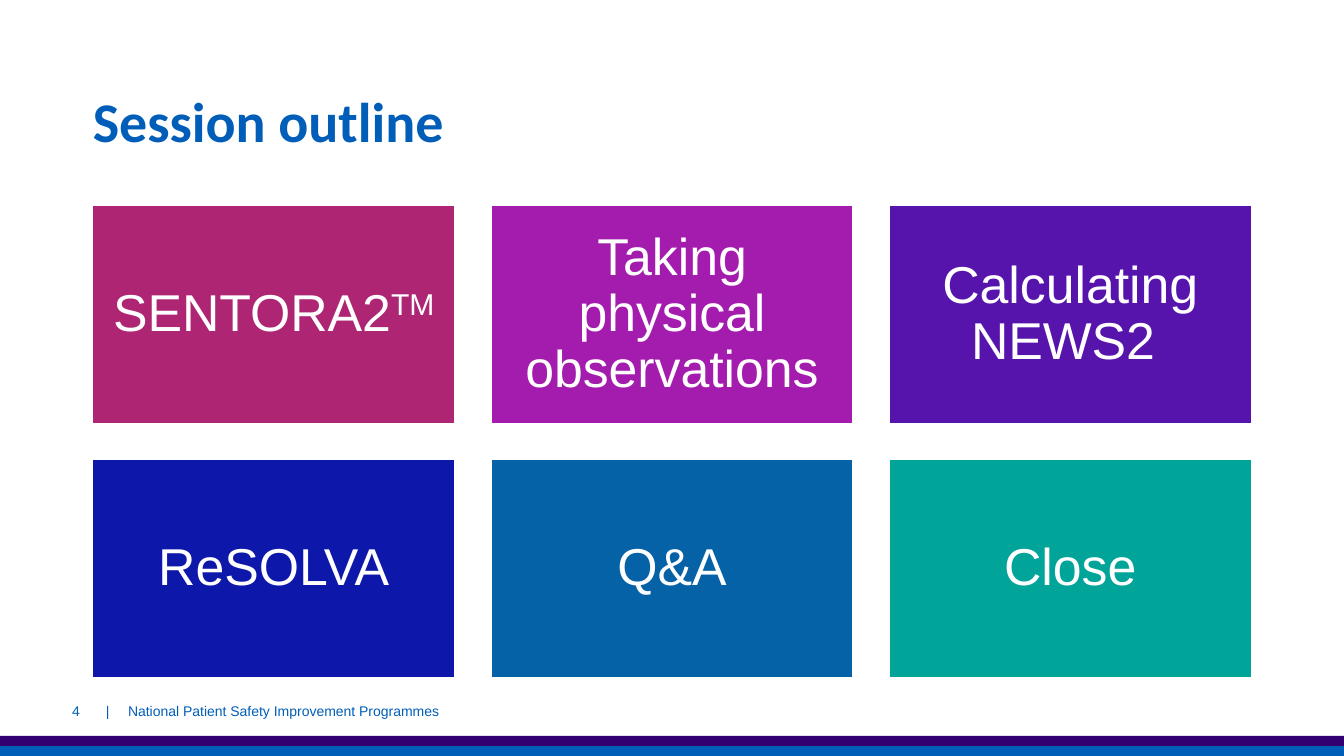
from dataclasses import dataclass

from lxml import etree
from pptx import Presentation
from pptx.dml.color import RGBColor
from pptx.enum.shapes import MSO_SHAPE
from pptx.enum.text import MSO_ANCHOR, MSO_AUTO_SIZE, PP_ALIGN
from pptx.oxml.ns import qn
from pptx.shapes.autoshape import Shape
from pptx.slide import Slide
from pptx.text.text import TextFrame
from pptx.util import Inches, Pt

RECTANGLE = MSO_SHAPE.RECTANGLE
TOP, MIDDLE = MSO_ANCHOR.TOP, MSO_ANCHOR.MIDDLE
LEFT, CENTER, RIGHT = PP_ALIGN.LEFT, PP_ALIGN.CENTER, PP_ALIGN.RIGHT
NO_AUTOFIT = MSO_AUTO_SIZE.NONE

WHITE = RGBColor(0xFF, 0xFF, 0xFF)
BLUE = RGBColor(0x00, 0x5E, 0xB8)
PURPLE = RGBColor(0x33, 0x00, 0x72)

SLIDE_WIDTH, SLIDE_HEIGHT = 13.33, 7.5
COLUMNS = 3
TILE_LEFT, TILE_TOP = 0.92, 2.04
TILE_WIDTH, TILE_HEIGHT = 3.59, 2.16
COLUMN_STEP, ROW_STEP = 3.95, 2.52
TILE_INSET = 0.15
BAND_HEIGHT = 0.1
FOOTER_TOP, FOOTER_HEIGHT = 6.85, 0.4
FOOTER_TAB = 0.22


@dataclass(frozen=True)
class Tile:
    text: str
    color: RGBColor
    superscript: str = ""


@dataclass(frozen=True)
class FooterItem:
    text: str
    left: float
    width: float
    side_inset: float
    alignment: PP_ALIGN


TILES = [
    Tile("SENTORA2", RGBColor(0xAE, 0x25, 0x73), "TM"),
    Tile("Taking physical observations", RGBColor(0xA3, 0x1C, 0xAD)),
    Tile("Calculating NEWS2 ", RGBColor(0x56, 0x14, 0xAC)),
    Tile("ReSOLVA", RGBColor(0x0D, 0x18, 0xAA)),
    Tile("Q&A", RGBColor(0x06, 0x62, 0xA7)),
    Tile("Close", RGBColor(0x00, 0xA4, 0x99)),
]

FOOTER_ITEMS = [
    FooterItem("|\tNational Patient Safety Improvement Programmes", 1.05, 4.5, 0, LEFT),
    FooterItem("4", 0.13, 0.76, 0.1, RIGHT),
]


def set_frame(frame: TextFrame, anchor: MSO_ANCHOR, side: float, vertical: float) -> None:
    frame.word_wrap = True
    frame.auto_size = NO_AUTOFIT
    frame.vertical_anchor = anchor
    frame.margin_left = frame.margin_right = Inches(side)
    frame.margin_top = frame.margin_bottom = Inches(vertical)


def format_runs(frame: TextFrame, font: str, size: int, color: RGBColor,
                bold: bool = False) -> None:
    for run in frame.paragraphs[0].runs:
        run.font.name = font
        run.font.size = Pt(size)
        run.font.bold = bold
        run.font.color.rgb = color


def add_rectangle(slide: Slide, left: float, top: float, width: float, height: float,
                  color: RGBColor) -> Shape:
    shape = slide.shapes.add_shape(
        RECTANGLE, Inches(left), Inches(top), Inches(width), Inches(height))
    shape.shadow.inherit = False
    shape.fill.solid()
    shape.fill.fore_color.rgb = color
    shape.line.fill.background()
    return shape


def add_bands(slide: Slide) -> None:
    for position, color in enumerate((BLUE, PURPLE), start=1):
        top = SLIDE_HEIGHT - position * BAND_HEIGHT
        add_rectangle(slide, 0, top, SLIDE_WIDTH, BAND_HEIGHT, color)


def add_tile(slide: Slide, index: int, tile: Tile) -> None:
    row, column = divmod(index, COLUMNS)
    shape = add_rectangle(
        slide, TILE_LEFT + column * COLUMN_STEP, TILE_TOP + row * ROW_STEP,
        TILE_WIDTH, TILE_HEIGHT, tile.color)
    shape.line.color.rgb = WHITE
    shape.line.width = Pt(1)
    frame = shape.text_frame
    set_frame(frame, MIDDLE, TILE_INSET, TILE_INSET)
    frame.text = tile.text
    paragraph = frame.paragraphs[0]
    paragraph.alignment = CENTER
    paragraph.line_spacing = 0.9
    if tile.superscript:
        run = paragraph.add_run()
        run.text = tile.superscript
        run._r.get_or_add_rPr().set("baseline", "30000")
    format_runs(frame, "Arial", 37, WHITE)


def set_title(slide: Slide, text: str) -> None:
    title = slide.shapes.title
    title.left, title.top = Inches(TILE_LEFT), Inches(0.93)
    title.width, title.height = Inches(11.76), Inches(0.98)
    frame = title.text_frame
    set_frame(frame, TOP, 0, 0)
    frame.text = text
    frame.paragraphs[0].alignment = LEFT
    frame.paragraphs[0].line_spacing = 0.9
    format_runs(frame, "Calibri", 40, BLUE, bold=True)


def add_footer_item(slide: Slide, item: FooterItem) -> None:
    box = slide.shapes.add_textbox(
        Inches(item.left), Inches(FOOTER_TOP), Inches(item.width), Inches(FOOTER_HEIGHT))
    frame = box.text_frame
    set_frame(frame, MIDDLE, item.side_inset, 0.05)
    frame.text = item.text
    paragraph = frame.paragraphs[0]
    paragraph.alignment = item.alignment
    if "\t" in item.text:
        tabs = etree.SubElement(paragraph._p.get_or_add_pPr(), qn("a:tabLst"))
        etree.SubElement(tabs, qn("a:tab"), pos=str(Inches(FOOTER_TAB)), algn="l")
    format_runs(frame, "Arial", 10, BLUE)


def main() -> None:
    presentation = Presentation()
    presentation.slide_width = Inches(SLIDE_WIDTH)
    presentation.slide_height = Inches(SLIDE_HEIGHT)
    slide = presentation.slides.add_slide(presentation.slide_layouts[5])
    add_bands(slide)
    for index, tile in enumerate(TILES):
        add_tile(slide, index, tile)
    set_title(slide, "Session outline")
    for item in FOOTER_ITEMS:
        add_footer_item(slide, item)
    presentation.save("out.pptx")


if __name__ == "__main__":
    main()
